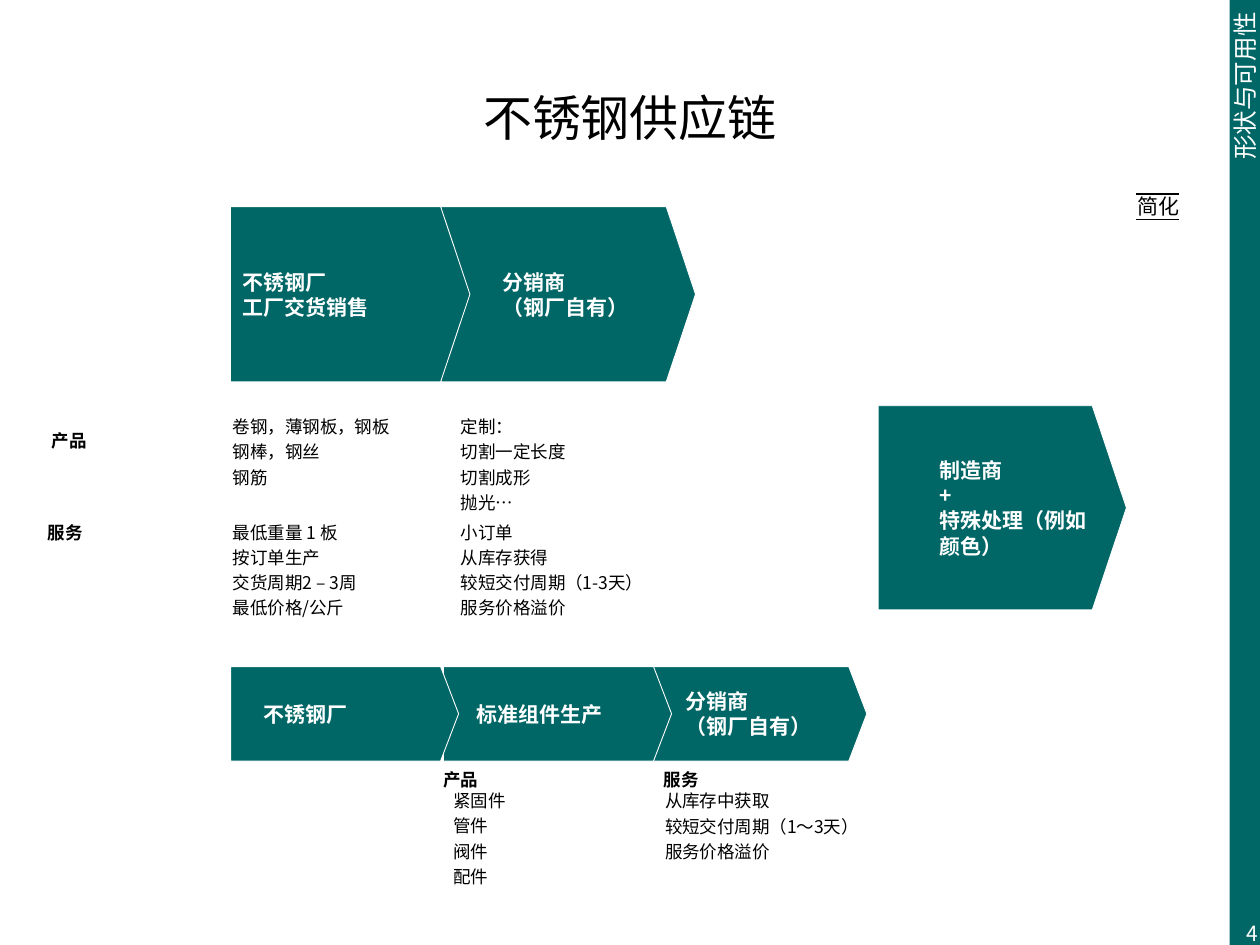
from lxml.etree import SubElement
from pptx import Presentation
from pptx.dml.color import RGBColor as RGB
from pptx.enum.shapes import MSO_CONNECTOR as CONN, MSO_SHAPE as SHAPE
from pptx.enum.text import MSO_ANCHOR as ANCHOR, PP_ALIGN as ALIGN
from pptx.oxml.ns import qn
from pptx.util import Inches, Pt

COLORS = {"teal": "006666", "white": "FFFFFF", "black": "000000"}
FONT = "Noto Sans CJK SC"
COLS, ROWS = 100, 75
CELL = Inches(10) / COLS
PAD = (1, 0.5, 1, 0.5)


def grid(*cells):
    return [round(c * CELL) for c in cells]


def color(name):
    return RGB.from_string(COLORS[name])


def write(sp, lines, size, ink="black", bold=False, align=ALIGN.LEFT,
          anchor=ANCHOR.TOP, pad=PAD, leading=None, wrap=True):
    tf = sp.text_frame
    tf.text = "\n".join(lines)
    tf.word_wrap = wrap
    tf.vertical_anchor = anchor
    tf.margin_left, tf.margin_top, tf.margin_right, tf.margin_bottom = grid(*pad)
    for p in tf.paragraphs:
        p.alignment = align
        if leading:
            p.line_spacing = Pt(leading)
        for r in p.runs:
            r.font.name = FONT
            r.font.size = Pt(size)
            r.font.bold = bold
            r.font.color.rgb = color(ink)
            SubElement(r.font._element, qn("a:ea")).set("typeface", FONT)


def add_text(slide, box, lines, size, **style):
    sp = slide.shapes.add_textbox(*grid(*box))
    write(sp, lines, size, **style)
    return sp


def add_sidebar(slide, box, heading, number):
    x, y, w, h = box
    sp = slide.shapes.add_shape(SHAPE.RECTANGLE, *grid(*box))
    sp.shadow.inherit = False
    sp.fill.solid()
    sp.fill.fore_color.rgb = color("teal")
    sp.line.fill.background()
    write(sp, [heading], 14, ink="white", align=ALIGN.RIGHT, anchor=ANCHOR.MIDDLE)
    sp.text_frame._txBody.bodyPr.set("vert", "vert270")
    add_text(slide, (x - 1.1, y + h - 2.9, 4.3, 4), [number], 12, ink="white",
             align=ALIGN.RIGHT, anchor=ANCHOR.MIDDLE)


def add_tag(slide, box, text):
    x, y, w, h = box
    add_text(slide, box, [text], 12, align=ALIGN.RIGHT, pad=(0, 0, 0, 0), wrap=False)
    for edge in (y, y + h):
        line = slide.shapes.add_connector(CONN.STRAIGHT, *grid(x, edge, x + w, edge))
        line.line.color.rgb = color("black")
        line.line.width = Pt(0.75)
        SubElement(line._element.spPr, qn("a:effectLst"))


def add_chain(slide, top, height, tip, steps):
    for left, width, indent, lines in reversed(steps):
        sp = slide.shapes.add_shape(SHAPE.PENTAGON, *grid(left, top, width, height))
        sp.adjustments[0] = tip
        sp.shadow.inherit = False
        sp.fill.solid()
        sp.fill.fore_color.rgb = color("teal")
        sp.line.color.rgb = color("white")
        sp.line.width = Pt(0.5)
        write(sp, lines, 12, ink="white", bold=True, anchor=ANCHOR.MIDDLE,
              pad=(indent, 0.5, 1, 0.5), leading=14.4)


def add_label(slide, left, top, text):
    add_text(slide, (left, top, 10.3, 3), [text], 10, bold=True,
             pad=(0, 0.5, 1, 0.5), leading=14.4)


def add_notes(slide, box, lines):
    add_text(slide, box, lines, 10, leading=14.4)


def add_mill_chain(slide):
    add_chain(slide, 16.4, 13.9, 0.167, [
        (18.3, 19, 1, ["不锈钢厂", "工厂交货销售"]),
        (35, 20.2, 4.9, ["分销商", "（钢厂自有）"]),
    ])
    rows = [
        (32.2, 7.9, ["卷钢，薄钢板，钢板", "钢棒，钢丝", "钢筋"],
         ["定制：", "切割一定长度", "切割成形", "抛光…"]),
        (40.6, 9.4, ["最低重量 1 板", "按订单生产", "交货周期2 – 3周", "最低价格/公斤"],
         ["小订单", "从库存获得", "较短交付周期（1-3天）", "服务价格溢价"]),
    ]
    for top, height, mill, dealer in rows:
        add_notes(slide, (17.5, top, 19, height), mill)
        add_notes(slide, (35.6, top, 21.5, height), dealer)
    add_label(slide, 4.1, 33.3, "产品")
    add_label(slide, 3.8, 40.6, "服务")


def add_component_chain(slide):
    add_chain(slide, 52.9, 7.5, 0.191, [
        (18.3, 18.1, 2.6, ["不锈钢厂"]),
        (35.2, 18.1, 2.6, ["标准组件生产"]),
        (51.8, 17, 2.6, ["分销商", "（钢厂自有）"]),
    ])
    add_label(slide, 35.2, 60.2, "产品")
    add_label(slide, 52.7, 60.2, "服务")
    add_notes(slide, (35, 61.9, 18.2, 9.4), ["紧固件", "管件", "阀件", "配件"])
    add_notes(slide, (51.8, 61.9, 19.7, 7.9),
              ["从库存中获取", "较短交付周期（1～3天）", "服务价格溢价"])


def main():
    prs = Presentation()
    prs.slide_width, prs.slide_height = grid(COLS, ROWS)
    slide = prs.slides.add_slide(prs.slide_layouts[6])
    add_sidebar(slide, (97.6, 0, 2.4, ROWS), "形状与可用性", "4")
    add_text(slide, (5, 3, 90, 12.5), ["不锈钢供应链"], 28,
             align=ALIGN.CENTER, anchor=ANCHOR.MIDDLE)
    add_tag(slide, (90.2, 15.4, 3.4, 2), "简化")
    add_mill_chain(slide)
    add_component_chain(slide)
    add_chain(slide, 32.2, 16.2, 0.167, [
        (69.7, 19.7, 4.9, ["制造商", "+", "特殊处理（例如颜色）"]),
    ])
    prs.save("out.pptx")


if __name__ == "__main__":
    main()
